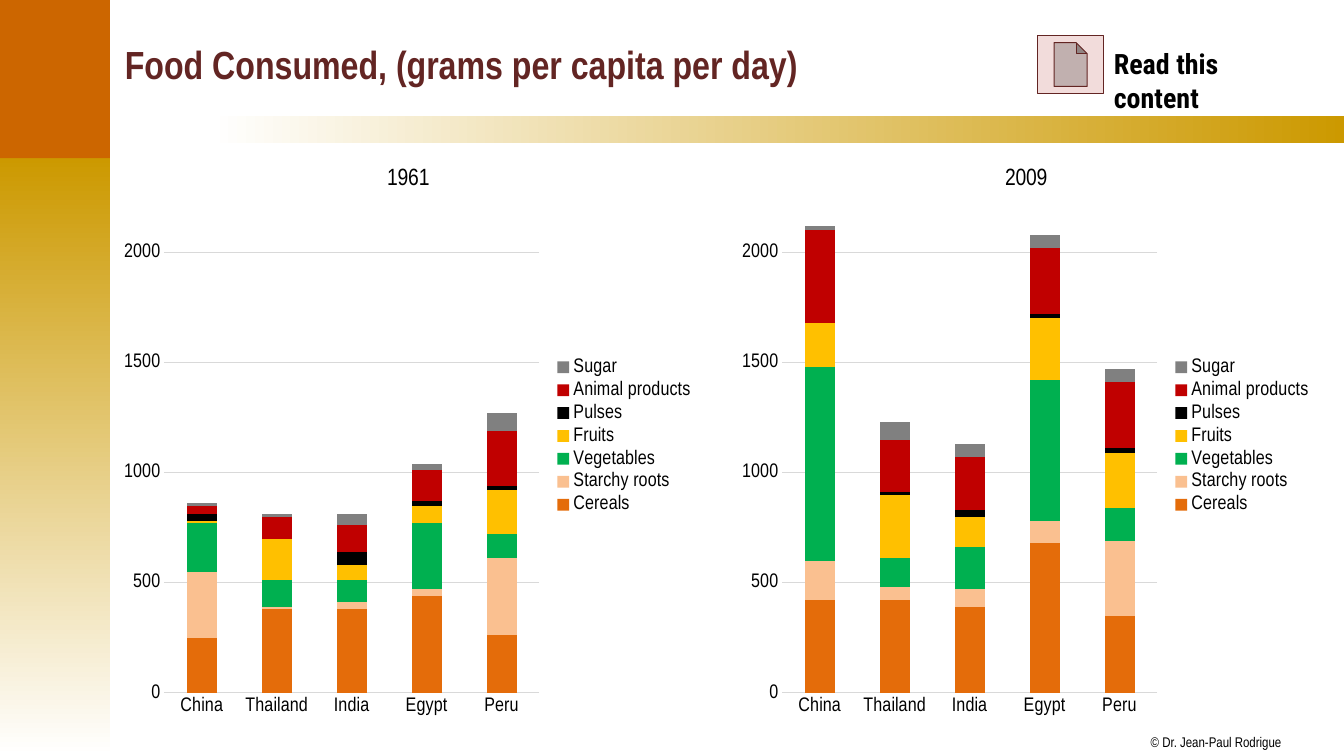
"""Build a slide that compares food consumed per capita in 1961 and 2009."""
from typing import NamedTuple, Optional

from lxml.etree import SubElement
from pptx import Presentation
from pptx.chart.data import CategoryChartData
from pptx.dml.color import RGBColor
from pptx.enum.chart import XL_CHART_TYPE, XL_LEGEND_POSITION, XL_TICK_MARK
from pptx.enum.shapes import MSO_SHAPE
from pptx.enum.text import MSO_ANCHOR, MSO_AUTO_SIZE, PP_ALIGN
from pptx.oxml import parse_xml
from pptx.oxml.ns import nsdecls, qn
from pptx.util import Pt

NARROW = "Arial Narrow"
BLACK, WHITE, GOLD, MAROON, GRID = "000000", "FFFFFF", "CC9900", "632523", "D9D9D9"
COUNTRIES = ["China", "Thailand", "India", "Egypt", "Peru"]
FOOD_COLOURS = {
    "Cereals": "E46C0A",
    "Starchy roots": "FAC090",
    "Vegetables": "00B050",
    "Fruits": "FFC000",
    "Pulses": "000000",
    "Animal products": "C00000",
    "Sugar": "808080",
}
PLOT_LAYOUT = {"x": 0.09, "y": 0.11, "w": 0.63, "h": 0.83}


class Frame(NamedTuple):
    left: float
    top: float
    width: float
    height: float

    def lengths(self):
        return [Pt(value) for value in self]


class Block(NamedTuple):
    frame: Frame
    colours: list[str]
    angle: int = 0
    kind: MSO_SHAPE = MSO_SHAPE.RECTANGLE
    outline: Optional[str] = None


class Label(NamedTuple):
    frame: Frame
    text: str
    font_name: str
    size: float
    bold: bool
    margins: tuple[float, float]


class YearChart(NamedTuple):
    year: str
    left: float
    rows: list[list[int]]


BLOCKS = [
    Block(Frame(-1.5, 113, 80, 427), [GOLD, WHITE], 270),
    Block(Frame(150.5, 83, 809.5, 19), [WHITE, GOLD]),
    Block(Frame(-1.5, -0.5, 80, 113.5), ["CC6600"]),
    Block(Frame(741, 25.2, 47.5, 41.8), ["F2DCDB"],
          kind=MSO_SHAPE.ACTION_BUTTON_DOCUMENT, outline=MAROON),
]
LABELS = [
    Label(Frame(822, 524, 94.5, 12), "© Dr. Jean-Paul Rodrigue", NARROW, 10, False, (0, 0)),
    Label(Frame(788.5, 30, 134, 32), "Read this content", "Roboto Condensed", 20, True,
          (7.2, 3.6)),
]
CHARTS = [
    YearChart("1961", 79.2, [
        [250, 380, 380, 440, 260], [300, 10, 30, 30, 350], [220, 120, 100, 300, 110],
        [10, 190, 70, 80, 200], [30, 0, 60, 20, 20], [40, 100, 120, 140, 250],
        [10, 10, 50, 30, 80]]),
    YearChart("2009", 520.6, [
        [420, 420, 390, 680, 350], [180, 60, 80, 100, 340], [880, 130, 190, 640, 150],
        [200, 290, 140, 280, 250], [0, 10, 30, 20, 20], [420, 240, 240, 300, 300],
        [20, 80, 60, 60, 60]]),
]


def colour(code: str) -> RGBColor:
    return RGBColor.from_string(code)


def style_font(font, name: str, size: float, code: str = BLACK, bold: bool = False) -> None:
    font.name, font.size, font.bold = name, Pt(size), bold
    font.color.rgb = colour(code)


def draw_block(page, block: Block) -> None:
    shape = page.shapes.add_shape(block.kind, *block.frame.lengths())
    shape.shadow.inherit = False
    if len(block.colours) == 1:
        shape.fill.solid()
        shape.fill.fore_color.rgb = colour(block.colours[0])
    else:
        shape.fill.gradient()
        shape.fill.gradient_angle = block.angle
        for stop, code in zip(shape.fill.gradient_stops, block.colours):
            stop.color.rgb = colour(code)
    if block.outline:
        shape.line.color.rgb = colour(block.outline)
        shape.line.width = Pt(0.75)
    else:
        shape.line.fill.background()


def draw_label(page, label: Label) -> None:
    frame = page.shapes.add_textbox(*label.frame.lengths()).text_frame
    frame.word_wrap = True
    frame.margin_left = frame.margin_right = Pt(label.margins[0])
    frame.margin_top = frame.margin_bottom = Pt(label.margins[1])
    frame.text = label.text
    style_font(frame.paragraphs[0].runs[0].font, label.font_name, label.size, bold=label.bold)


def draw_title(page) -> None:
    title = page.shapes.title
    title.left, title.top, title.width, title.height = Frame(82, 8, 862, 75).lengths()
    frame = title.text_frame
    frame.text = "Food Consumed, (grams per capita per day)"
    frame.auto_size = MSO_AUTO_SIZE.NONE
    frame.vertical_anchor = MSO_ANCHOR.MIDDLE
    para = frame.paragraphs[0]
    para.alignment = PP_ALIGN.LEFT
    style_font(para.runs[0].font, NARROW, 28, MAROON, True)


def place_plot(chart) -> None:
    plot_area = chart.element.xpath("c:chart/c:plotArea")[0]
    for previous in plot_area.findall(qn("c:layout")):
        plot_area.remove(previous)
    layout = parse_xml(f"<c:layout {nsdecls('c')}><c:manualLayout>"
                       '<c:layoutTarget val="inner"/><c:xMode val="edge"/>'
                       '<c:yMode val="edge"/></c:manualLayout></c:layout>')
    for side, value in PLOT_LAYOUT.items():
        SubElement(layout[0], qn(f"c:{side}")).set("val", str(value))
    plot_area.insert(0, layout)


def style_axes(chart) -> None:
    values, categories = chart.value_axis, chart.category_axis
    for axis in (values, categories):
        axis.major_tick_mark = axis.minor_tick_mark = XL_TICK_MARK.NONE
        style_font(axis.tick_labels.font, NARROW, 14)
    values.minimum_scale, values.maximum_scale, values.major_unit = 0, 2200, 500
    values.format.line.fill.background()
    for line in (values.major_gridlines.format.line, categories.format.line):
        line.color.rgb = colour(GRID)
        line.width = Pt(0.75)


def draw_chart(page, item: YearChart) -> None:
    data = CategoryChartData()
    data.categories = COUNTRIES
    for food, row in zip(FOOD_COLOURS, item.rows):
        data.add_series(food, row)
    frame = Frame(item.left, 103, 424.8, 416.9)
    chart = page.shapes.add_chart(
        XL_CHART_TYPE.COLUMN_STACKED, *frame.lengths(), data).chart
    style_font(chart.font, NARROW, 14)
    chart.has_title = True
    chart.chart_title.text_frame.text = item.year
    style_font(chart.chart_title.text_frame.paragraphs[0].runs[0].font, NARROW, 16.8)
    chart.has_legend = True
    chart.legend.position = XL_LEGEND_POSITION.RIGHT
    chart.legend.include_in_layout = False
    style_font(chart.legend.font, NARROW, 14)
    plot = chart.plots[0]
    plot.gap_width, plot.overlap, plot.vary_by_categories = 150, 100, False
    for series in plot.series:
        series.format.fill.solid()
        series.format.fill.fore_color.rgb = colour(FOOD_COLOURS[series.name])
    style_axes(chart)
    place_plot(chart)


def main() -> None:
    deck = Presentation()
    deck.slide_width, deck.slide_height = Pt(960), Pt(540)
    page = deck.slides.add_slide(deck.slide_layouts[5])
    draw_title(page)
    for block in BLOCKS:
        draw_block(page, block)
    for item in CHARTS:
        draw_chart(page, item)
    for label in LABELS:
        draw_label(page, label)
    deck.save("out.pptx")


if __name__ == "__main__":
    main()
